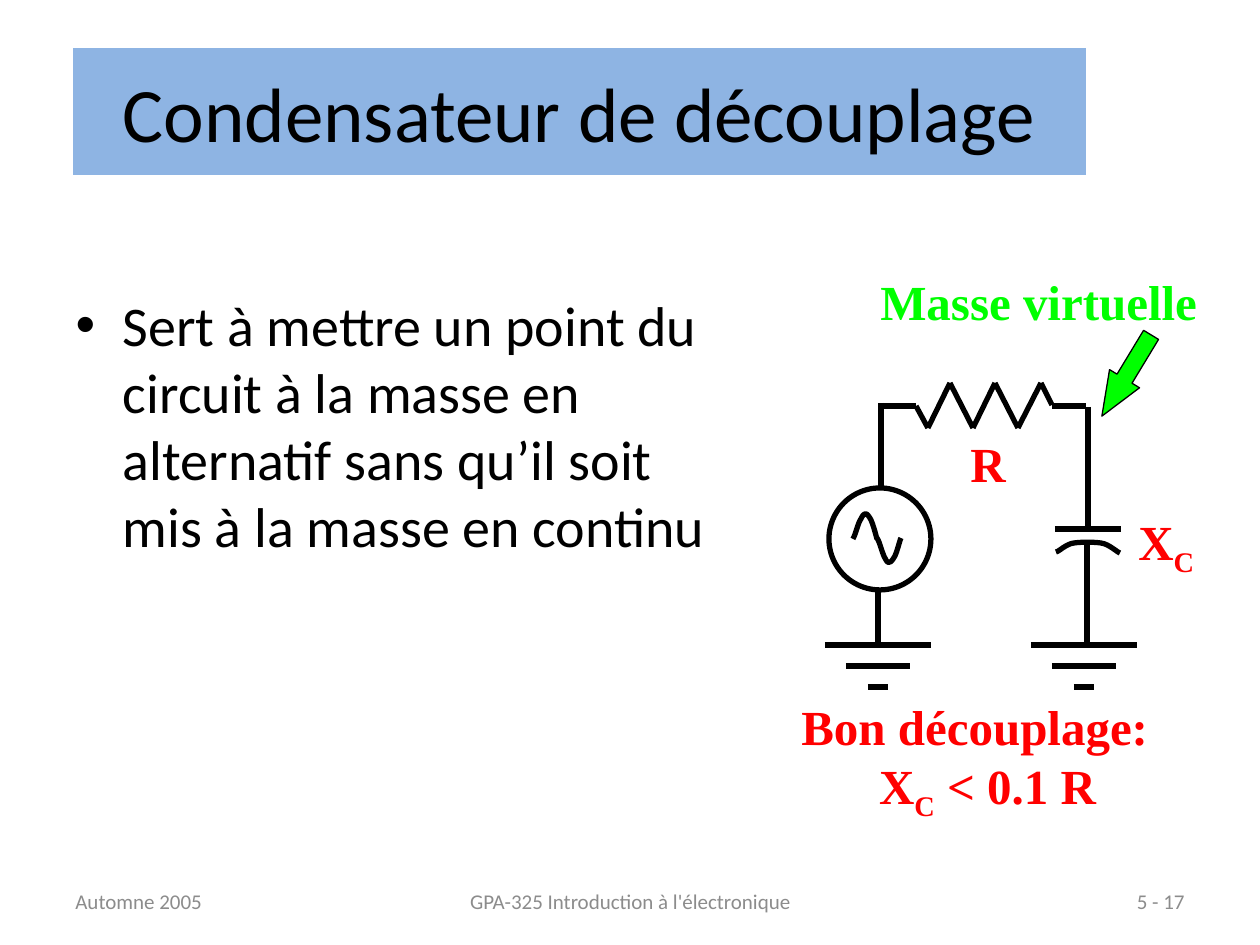
from itertools import pairwise
from lxml.etree import SubElement
from pptx import Presentation
from pptx.dml.color import RGBColor
from pptx.enum.shapes import MSO_CONNECTOR as Connector, MSO_SHAPE as Shape
from pptx.enum.text import MSO_ANCHOR as Anchor, MSO_AUTO_SIZE as AutoSize, PP_ALIGN as Align
from pptx.oxml.ns import qn
from pptx.util import Pt

PX = 7257
BLACK, GREY, RED, GREEN, BLUE = "000000", "8C8C8C", "FF0000", "00FF00", "8EB4E3"
SANS, SERIF = "Calibri", "Times New Roman"
LEFT, CENTER, RIGHT = Align.LEFT, Align.CENTER, Align.RIGHT

TITLE = "Condensateur de découplage"
BODY = ("Sert à mettre un point du circuit à la masse en alternatif "
        "sans qu’il soit mis à la masse en continu")
FOOTERS = [
    ("Automne 2005", (63, 876, 294, 50), LEFT),
    ("GPA-325 Introduction à l'électronique", (431, 876, 399, 50), CENTER),
    ("5 - 17", (903, 876, 294, 50), RIGHT),
]
REACTANCE = [("X", 0), ("C", -25)]
LABELS = [
    ((789, 690, 397, 130), RED, True,
     [(LEFT, [("Bon découplage:", 0)]), (CENTER, REACTANCE + [(" < 0.1 R", 0)])]),
    ((1126, 505, 84, 72), RED, False, [(LEFT, REACTANCE)]),
    ((958, 427, 60, 72), RED, False, [(LEFT, [("R", 0)])]),
    ((868, 265, 343, 72), GREEN, False, [(LEFT, [("Masse virtuelle", 0)])]),
]
WIRES = [
    [(916, 406), (881, 406)], [(1086, 406), (1052, 406)],
    [(881, 403), (881, 488)], [(878, 592), (878, 645)],
    [(1088, 407), (1088, 529)], [(1087, 543), (1087, 645)],
]
RESISTOR = [(916, 406), (928, 428), (950, 383), (973, 428), (995, 383),
            (1018, 428), (1041, 383), (1052, 405)]
TOP_PLATE = [(1055, 529), (1121, 529)]
CURVES = [
    [(1120, 553), (1117, 552), (1109, 544), (1101, 543), (1094, 542), (1081, 542),
     (1074, 543), (1066, 544), (1060, 551), (1056, 552)],
    [(877, 539), (876, 535), (873, 524), (871, 520), (869, 516), (867, 514), (866, 514),
     (864, 514), (863, 515), (861, 519), (858, 523), (856, 534), (853, 539)],
    [(901, 538), (900, 540), (897, 552), (895, 556), (892, 561), (891, 562), (890, 562),
     (888, 563), (887, 562), (885, 558), (882, 553), (880, 542), (877, 538)],
]
GROUND_CENTERS = [878, 1084]
GROUND_BARS = [(53, 645), (32, 666), (10, 687)]
SOURCE = (829, 488, 102, 102)
ARROW = (1079, 358, 95, 35)


def px(values):
    return [round(value * PX) for value in values]


def color(value):
    return RGBColor.from_string(value)


def stroke(shape, width=3):
    shape.line.color.rgb = color(BLACK)
    shape.line.width = Pt(width)


def add_span(para, text, font, size, tint, bold=False, baseline=0):
    span = para.add_run()
    span.text = text
    span.font.name, span.font.size, span.font.bold = font, Pt(size), bold
    span.font.color.rgb = color(tint)
    if baseline:
        span.font._element.set("baseline", str(baseline * 1000))


def add_path(slide, points):
    for start, end in pairwise(points):
        wire = slide.shapes.add_connector(Connector.STRAIGHT, *px(start + end))
        stroke(wire)
        SubElement(wire._element.spPr, qn("a:effectLst"))


def bezier(a, b, c, d, t):
    u = 1 - t
    return tuple(u**3 * p + 3 * u * u * t * q + 3 * u * t * t * r + t**3 * s
                 for p, q, r, s in zip(a, b, c, d))


def add_curve(slide, knots, steps=8):
    points = [bezier(*knots[i:i + 4], step / steps)
              for i in range(0, len(knots) - 1, 3) for step in range(1, steps + 1)]
    builder = slide.shapes.build_freeform(*px(knots[0]))
    builder.add_line_segments([px(point) for point in points], close=False)
    curve = builder.convert_to_shape()
    curve.shadow.inherit = False
    curve.fill.background()
    stroke(curve)


def add_circuit(slide):
    grounds = [[(x - half, y), (x + half, y)]
               for x in GROUND_CENTERS for half, y in GROUND_BARS]
    for points in WIRES + grounds + [RESISTOR, TOP_PLATE]:
        add_path(slide, points)
    for knots in CURVES:
        add_curve(slide, knots)
    source = slide.shapes.add_shape(Shape.OVAL, *px(SOURCE))
    source.fill.background()
    stroke(source)
    arrow = slide.shapes.add_shape(Shape.LEFT_ARROW, *px(ARROW))
    arrow.adjustments[0], arrow.adjustments[1] = 0.5, 1.25
    arrow.rotation = 301.2
    arrow.fill.solid()
    arrow.fill.fore_color.rgb = color(GREEN)
    stroke(arrow, 0.75)
    for shape in (source, arrow):
        shape.shadow.inherit = False


def fill_placeholder(box, text, place, size):
    box.left, box.top, box.width, box.height = px(place)
    add_span(box.text_frame.paragraphs[0], text, SANS, size, BLACK)


def add_texts(slide):
    title, body = slide.placeholders
    fill_placeholder(title, TITLE, (73, 48, 1013, 127), 44)
    title.fill.solid()
    title.fill.fore_color.rgb = color(BLUE)
    fill_placeholder(body, BODY, (63, 284, 677, 561), 32)
    for text, place, align in FOOTERS:
        frame = slide.shapes.add_textbox(*px(place)).text_frame
        frame.word_wrap, frame.vertical_anchor = True, Anchor.MIDDLE
        frame.paragraphs[0].alignment = align
        add_span(frame.paragraphs[0], text, SANS, 12, GREY)
    for place, tint, wrap, lines in LABELS:
        frame = slide.shapes.add_textbox(*px(place)).text_frame
        frame.word_wrap, frame.auto_size = wrap, AutoSize.SHAPE_TO_FIT_TEXT
        for index, (align, spans) in enumerate(lines):
            para = frame.add_paragraph() if index else frame.paragraphs[0]
            para.alignment = align
            for text, baseline in spans:
                add_span(para, text, SERIF, 28, tint, True, baseline)


def main():
    """Build the decoupling capacitor slide."""
    deck = Presentation()
    deck.slide_width, deck.slide_height = px((1260, 945))
    slide = deck.slides.add_slide(deck.slide_layouts[1])
    add_texts(slide)
    add_circuit(slide)
    deck.save("out.pptx")


if __name__ == "__main__":
    main()
